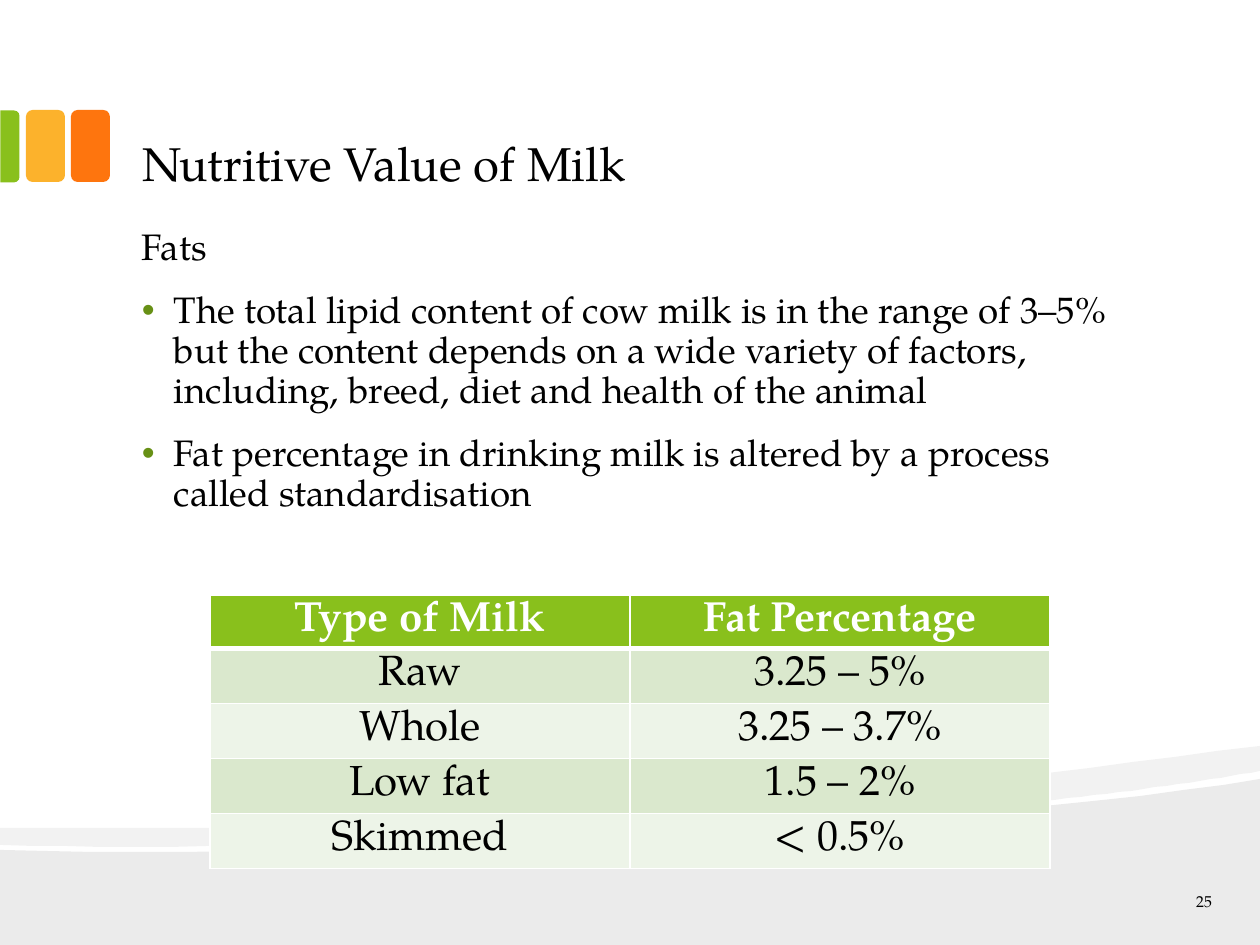
import pptx
import pptx.util
import pptx.dml.color
import pptx.enum.shapes
import pptx.enum.text
import pptx.oxml
import pptx.oxml.ns
from dataclasses import dataclass

PX = 914400 // 126
SHAPE = pptx.enum.shapes.MSO_SHAPE
ALIGN = pptx.enum.text.PP_ALIGN
ANCHOR = pptx.enum.text.MSO_ANCHOR


@dataclass(frozen=True)
class Theme:
    font: str = "TeX Gyre Pagella"
    text: str = "000000"
    white: str = "FFFFFF"
    green: str = "89C01C"
    yellow: str = "FCB22C"
    orange: str = "FE750E"
    bullet: str = "679015"
    row_dark: str = "DAE8CD"
    row_light: str = "EDF4E8"
    title_size: int = 27
    body_size: int = 21
    table_size: int = 24
    number_size: int = 9


THEME = Theme()


def px(*lengths):
    return [length * PX for length in lengths]


def rgb(color):
    return pptx.dml.color.RGBColor.from_string(color)


def xml(tag, inner="", attrs=""):
    ns = pptx.oxml.ns.nsdecls("a")
    return pptx.oxml.parse_xml(f"<a:{tag} {ns} {attrs}>{inner}</a:{tag}>")


def paint(sp, color):
    sp.shadow.inherit = False
    sp.fill.solid()
    sp.fill.fore_color.rgb = rgb(color)
    sp.line.fill.background()


def add_run(p, text, size, color=THEME.text, bold=False):
    r = p.add_run()
    r.text = text
    r.font.name = THEME.font
    r.font.size = pptx.util.Pt(size)
    r.font.bold = bold
    r.font.color.rgb = rgb(color)


def set_frame(sp, anchor):
    tf = sp.text_frame
    tf.word_wrap = True
    tf.auto_size = pptx.enum.text.MSO_AUTO_SIZE.NONE
    tf.vertical_anchor = anchor
    tf.margin_left, tf.margin_right, tf.margin_top, tf.margin_bottom = px(16, 16, 9, 9)
    return tf


def bezier(start, c1, c2, end, steps=24):
    points = []
    for i in range(1, steps + 1):
        t = i / steps
        weights = ((1 - t) ** 3, 3 * t * (1 - t) ** 2, 3 * t * t * (1 - t), t ** 3)
        points.append(tuple(
            sum(w * q[axis] for w, q in zip(weights, (start, c1, c2, end)))
            for axis in (0, 1)))
    return points


def add_band(s, start, segments, alpha):
    points = [start]
    for segment in segments:
        points += bezier(points[-1], *segment) if len(segment) == 3 else segment
    builder = s.shapes.build_freeform(*start, scale=PX)
    builder.add_line_segments(points[1:], close=True)
    sp = builder.convert_to_shape()
    paint(sp, THEME.text)
    color = sp.fill._xPr.find(".//" + pptx.oxml.ns.qn("a:srgbClr"))
    color.append(xml("alpha", attrs=f'val="{alpha * 1000}"'))


def add_tab(s, kind, box, color, rotation=0):
    sp = s.shapes.add_shape(kind, *px(*box))
    sp.rotation = rotation
    paint(sp, color)
    return sp


def add_title(s, text):
    sp = s.shapes.title
    sp.left, sp.top, sp.width, sp.height = px(126, 21, 1008, 179)
    p = set_frame(sp, ANCHOR.BOTTOM).paragraphs[0]
    p.alignment = ALIGN.LEFT
    add_run(p, text, THEME.title_size)


def add_bullet(p):
    pPr = p._p.get_or_add_pPr()
    indent = 32 * PX
    pPr.set("marL", str(indent))
    pPr.set("indent", str(-indent))
    pPr.append(xml("buClr", f'<a:srgbClr val="{THEME.bullet}"/>'))
    pPr.append(xml("buFont", attrs='typeface="Arial"'))
    pPr.append(xml("buChar", attrs='char="•"'))


def add_body(s, heading, bullets):
    tf = set_frame(s.shapes.add_textbox(*px(126, 220, 1008, 630)), ANCHOR.TOP)
    for i, text in enumerate([heading, *bullets]):
        p = tf.add_paragraph() if i else tf.paragraphs[0]
        p.line_spacing = 0.9
        p.space_before = pptx.util.Pt(13.5)
        if i:
            add_bullet(p)
        add_run(p, text, THEME.body_size)


def set_borders(cell, widths):
    tcPr = cell._tc.get_or_add_tcPr()
    fill = f'<a:solidFill><a:srgbClr val="{THEME.white}"/></a:solidFill>'
    for side, width in zip("LRTB", widths):
        tcPr.append(xml(f"ln{side}", fill, f'w="{pptx.util.Pt(width)}"'))


def add_table(s, rows):
    frame = s.shapes.add_table(len(rows), len(rows[0]), *px(210, 595, 840, 51 * len(rows)))
    for i, row in enumerate(rows):
        header = i == 0
        fill = THEME.green if header else THEME.row_dark if i % 2 else THEME.row_light
        for j, text in enumerate(row):
            cell = frame.table.cell(i, j)
            set_borders(cell, (1, 1, 3 if i == 1 else 1, 3 if header else 1))
            cell.fill.solid()
            cell.fill.fore_color.rgb = rgb(fill)
            p = cell.text_frame.paragraphs[0]
            p.alignment = ALIGN.CENTER
            add_run(p, text, THEME.table_size, THEME.white if header else THEME.text, header)


def add_number(s, text):
    p = set_frame(s.shapes.add_textbox(*px(1144, 888, 84, 26)), ANCHOR.MIDDLE).paragraphs[0]
    p.alignment = ALIGN.RIGHT
    add_run(p, text, THEME.number_size)


def main():
    prs = pptx.Presentation()
    prs.slide_width, prs.slide_height = px(1260, 945)
    s = prs.slides.add_slide(prs.slide_layouts[5])

    add_band(s, (1260, 779), [
        [(1260, 945), (0, 945)],
        [(0, 850)],
        [(333, 861), (985, 825), (1260, 779)],
    ], 8)
    add_band(s, (1260, 746), [
        [(1260, 771)],
        [(1187, 784), (1086, 798), (973, 808)],
        [(659, 833), (243, 853), (0, 845)],
        [(0, 828)],
        [(616, 834), (917, 790), (1260, 746)],
    ], 5)

    add_tab(s, SHAPE.ROUNDED_RECTANGLE, (71, 110, 39, 72), THEME.orange)
    add_tab(s, SHAPE.ROUNDED_RECTANGLE, (26, 110, 39, 72), THEME.yellow)
    green = add_tab(s, SHAPE.ROUND_2_SAME_RECTANGLE, (-26, 137, 72, 19), THEME.green, 90)
    green.adjustments[0] = 0.29

    add_title(s, "Nutritive Value of Milk")
    add_body(s, "Fats", [
        "The total lipid content of cow milk is in the range of 3–5% but the content "
        "depends on a wide variety of factors, including, breed, diet and health of the animal",
        "Fat percentage in drinking milk is altered by a process called standardisation",
    ])
    add_table(s, [
        ("Type of Milk", "Fat Percentage"),
        ("Raw", "3.25 – 5%"),
        ("Whole", "3.25 – 3.7%"),
        ("Low fat", "1.5 – 2%"),
        ("Skimmed", "< 0.5%"),
    ])
    add_number(s, "25")
    prs.save("out.pptx")


if __name__ == "__main__":
    main()
